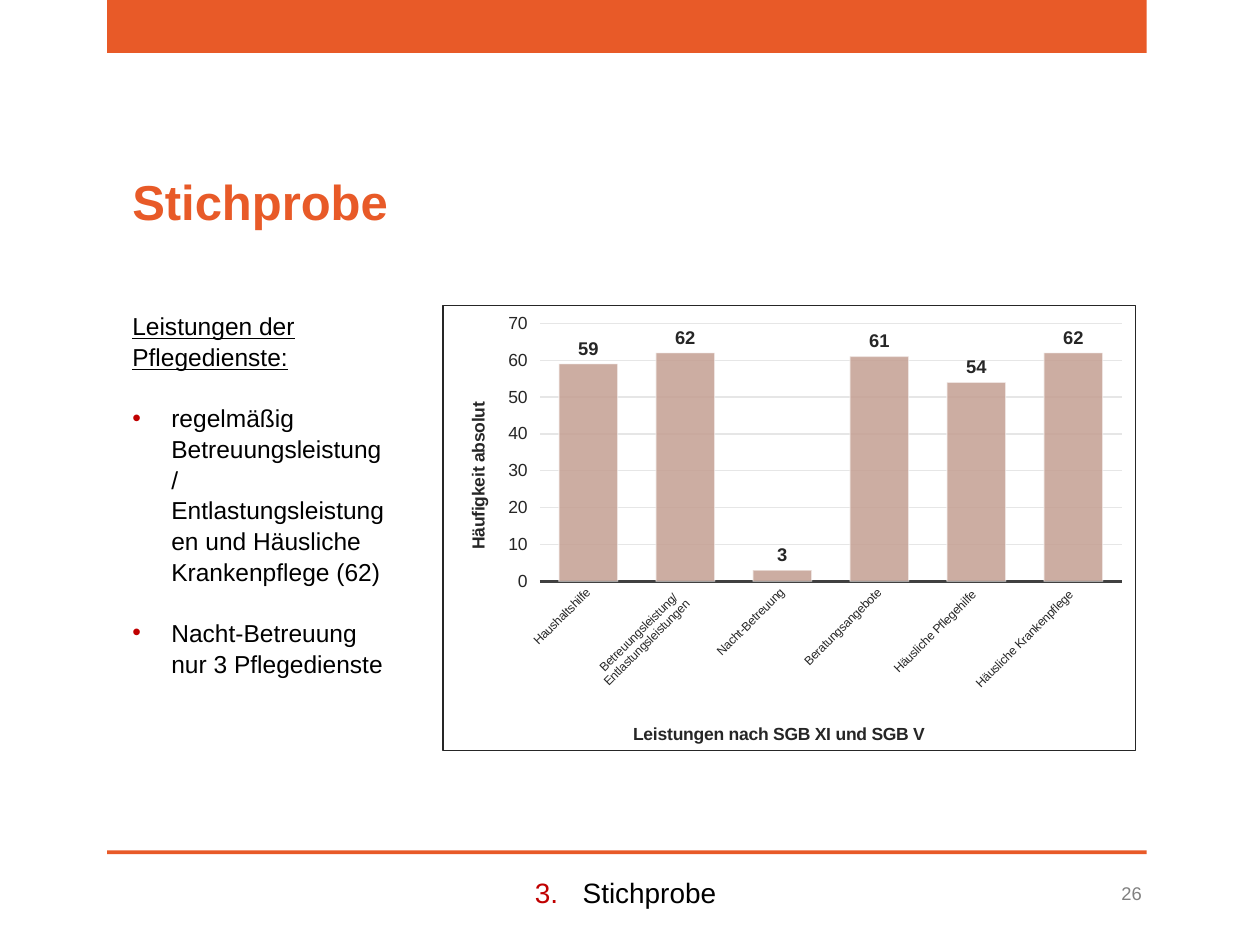
"""Build the slide on the sample of care services: bullet list and column chart."""
import pptx
import pptx.chart.data
import pptx.dml.color
import pptx.enum.chart
import pptx.enum.shapes
import pptx.enum.text
import pptx.oxml
import pptx.oxml.ns
import pptx.util

Inches, Pt = pptx.util.Inches, pptx.util.Pt
RGBColor = pptx.dml.color.RGBColor
Align = pptx.enum.text.PP_ALIGN
Anchor = pptx.enum.text.MSO_ANCHOR
qn = pptx.oxml.ns.qn

ORANGE = RGBColor(0xE8, 0x5A, 0x28)
RED = RGBColor(0xC0, 0x00, 0x00)
BLACK = RGBColor(0x00, 0x00, 0x00)
GREY = RGBColor(0x80, 0x80, 0x80)
INK = RGBColor(0x26, 0x26, 0x26)
AXIS = RGBColor(0x40, 0x40, 0x40)
GRID = RGBColor(0xE6, 0xE6, 0xE6)
ROSE = RGBColor(0xC4, 0x9F, 0x92)
WHITE = RGBColor(0xFF, 0xFF, 0xFF)
FONT = "Arial"

TITLE = "Stichprobe"
LEAD = "Leistungen der Pflegedienste:"
FINDINGS = [
    "regelmäßig Betreuungsleistung/ Entlastungsleistungen und Häusliche Krankenpflege (62)",
    "Nacht-Betreuung nur 3 Pflegedienste",
]
SECTION, SECTION_NUMBER = "Stichprobe", 3
PAGE = "26"
SERVICES = [
    ("Haushaltshilfe", 59),
    ("Betreuungsleistung/\nEntlastungsleistungen ", 62),
    ("Nacht-Betreuung", 3),
    ("Beratungsangebote", 61),
    ("Häusliche Pflegehilfe ", 54),
    ("Häusliche Krankenpflege ", 62),
]
SERVICE_AXIS = "Leistungen nach SGB XI und SGB V"
COUNT_AXIS = "Häufigkeit absolut"
BANDS = [(0, 0.42), (6.75, 0.03)]


def style(font, size, color, bold=False):
    font.name, font.size, font.bold = FONT, Pt(size), bold
    font.color.rgb = color


def write(paragraph, text, size, color, bold=False, align=Align.LEFT):
    paragraph.alignment = align
    run = paragraph.add_run()
    run.text = text
    style(run.font, size, color, bold)
    return run


def place(shape, left, top, width, height):
    shape.left, shape.top = Inches(left), Inches(top)
    shape.width, shape.height = Inches(width), Inches(height)


def add_xml(parent, tag, **attributes):
    child = pptx.oxml.parse_xml(f"<{tag} {pptx.oxml.ns.nsdecls(tag.split(':')[0])}/>")
    for key, value in attributes.items():
        child.set(key, str(value))
    parent.append(child)
    return child


def set_marker(paragraph, indent, tag, **attributes):
    properties = paragraph._p.get_or_add_pPr()
    properties.set("marL", str(Inches(indent)))
    properties.set("indent", str(-Inches(indent)))
    if tag != "a:buNone":
        add_xml(add_xml(properties, "a:buClr"), "a:srgbClr", val=RED)
        add_xml(properties, "a:buFont", typeface=FONT)
    add_xml(properties, tag, **attributes)


def set_alpha(fill_parent, percent):
    for color in fill_parent.iter(qn("a:srgbClr")):
        add_xml(color, "a:alpha", val=percent * 1000)


def set_layout(element, position, **fractions):
    for old in element.findall(qn("c:layout")):
        element.remove(old)
    layout = add_xml(element, "c:layout")
    element.insert(position, layout)
    manual = add_xml(layout, "c:manualLayout")
    if "w" in fractions:
        add_xml(manual, "c:layoutTarget", val="inner")
    for side in "xy":
        add_xml(manual, f"c:{side}Mode", val="edge")
    for key, value in fractions.items():
        add_xml(manual, f"c:{key}", val=value)


def add_bands(slide):
    for top, height in BANDS:
        band = slide.shapes.add_shape(
            pptx.enum.shapes.MSO_SHAPE.RECTANGLE,
            Inches(0.85), Inches(top), Inches(8.25), Inches(height))
        band.shadow.inherit = False
        band.fill.solid()
        band.fill.fore_color.rgb = ORANGE
        band.line.fill.background()


def add_texts(slide):
    title, body = slide.shapes.title, slide.placeholders[1]
    place(title, 0.95, 1.31, 2.23, 0.57)
    place(body, 0.95, 2.41, 2.23, 2.69)
    for holder in (title, body):
        holder.text_frame.vertical_anchor = Anchor.TOP
        holder.text_frame.auto_size = pptx.enum.text.MSO_AUTO_SIZE.NONE
    title.text_frame.word_wrap = False
    write(title.text_frame.paragraphs[0], TITLE, 28, ORANGE, True)

    lead = body.text_frame.paragraphs[0]
    lead.space_before, lead.line_spacing = Pt(0), 1.05
    write(lead, LEAD, 14, BLACK).font.underline = True
    set_marker(lead, 0, "a:buNone")
    for finding in FINDINGS:
        item = body.text_frame.add_paragraph()
        item.space_before, item.line_spacing = Pt(17), 1.05
        write(item, finding, 14, BLACK)
        set_marker(item, 0.31, "a:buChar", char="•")

    section = slide.shapes.add_textbox(Inches(0.83), Inches(6.9), Inches(8.27), Inches(0.37))
    section.text_frame.word_wrap = True
    heading = section.text_frame.paragraphs[0]
    write(heading, SECTION, 16, BLACK, align=Align.CENTER)
    set_marker(heading, 0.38, "a:buAutoNum", type="arabicPeriod", startAt=SECTION_NUMBER)

    page = slide.shapes.add_textbox(Inches(8.33), Inches(6.89), Inches(0.83), Inches(0.4))
    page.text_frame.word_wrap = True
    page.text_frame.vertical_anchor = Anchor.MIDDLE
    write(page.text_frame.paragraphs[0], PAGE, 10.5, GREY, align=Align.RIGHT)


def add_service_chart(slide):
    data = pptx.chart.data.CategoryChartData()
    data.categories = [service for service, _ in SERVICES]
    data.add_series("Series 1", [count for _, count in SERVICES])
    chart = slide.shapes.add_chart(
        pptx.enum.chart.XL_CHART_TYPE.COLUMN_CLUSTERED,
        Inches(3.51), Inches(2.42), Inches(5.51), Inches(3.54), data).chart
    chart.has_legend = chart.has_title = False
    style(chart.font, 10, BLACK)

    frame = add_xml(chart._chartSpace, "c:spPr")
    chart._chartSpace.chart.addnext(frame)
    add_xml(add_xml(frame, "a:solidFill"), "a:srgbClr", val=WHITE)
    border = add_xml(frame, "a:ln", w=Pt(0.75))
    add_xml(add_xml(border, "a:solidFill"), "a:srgbClr", val=INK)

    plot = chart.plots[0]
    plot.gap_width, plot.vary_by_categories = 65, False
    bars = plot.series[0].format
    bars.fill.solid()
    bars.fill.fore_color.rgb = ROSE
    set_alpha(plot.series[0]._element, 85)
    bars.line.width = Pt(0.75)
    bars.line.color.rgb = WHITE
    set_alpha(bars.line._ln, 50)
    plot.has_data_labels = True
    labels = plot.data_labels
    labels.show_value = True
    labels.position = pptx.enum.chart.XL_LABEL_POSITION.OUTSIDE_END
    style(labels.font, 10.5, INK, True)

    services, counts = chart.category_axis, chart.value_axis
    for axis, name, size, x, y in [(services, SERVICE_AXIS, 7, 0.27, 0.93),
                                   (counts, COUNT_AXIS, 10, 0.03, 0.21)]:
        caption = axis.axis_title
        write(caption.text_frame.paragraphs[0], name, 10, INK, True, Align.CENTER)
        set_layout(caption._element, 1, x=x, y=y)
        style(axis.tick_labels.font, size, INK)
    services.major_tick_mark = pptx.enum.chart.XL_TICK_MARK.NONE
    services.format.line.color.rgb = AXIS
    services.format.line.width = Pt(1.5)
    services._element.find(qn("c:txPr")).find(qn("a:bodyPr")).set("rot", str(-45 * 60000))
    counts.minimum_scale, counts.maximum_scale, counts.major_unit = 0, 70, 10
    counts.format.line.fill.background()
    counts.major_gridlines.format.line.color.rgb = GRID
    counts.major_gridlines.format.line.width = Pt(0.75)
    set_layout(chart._chartSpace.chart.plotArea, 0, x=0.14, y=0.04, w=0.84, h=0.58)


def main():
    deck = pptx.Presentation()
    deck.slide_width, deck.slide_height = Inches(10), Inches(7.5)
    slide = deck.slides.add_slide(deck.slide_layouts[1])
    add_bands(slide)
    add_texts(slide)
    add_service_chart(slide)
    deck.save("out.pptx")


if __name__ == "__main__":
    main()
